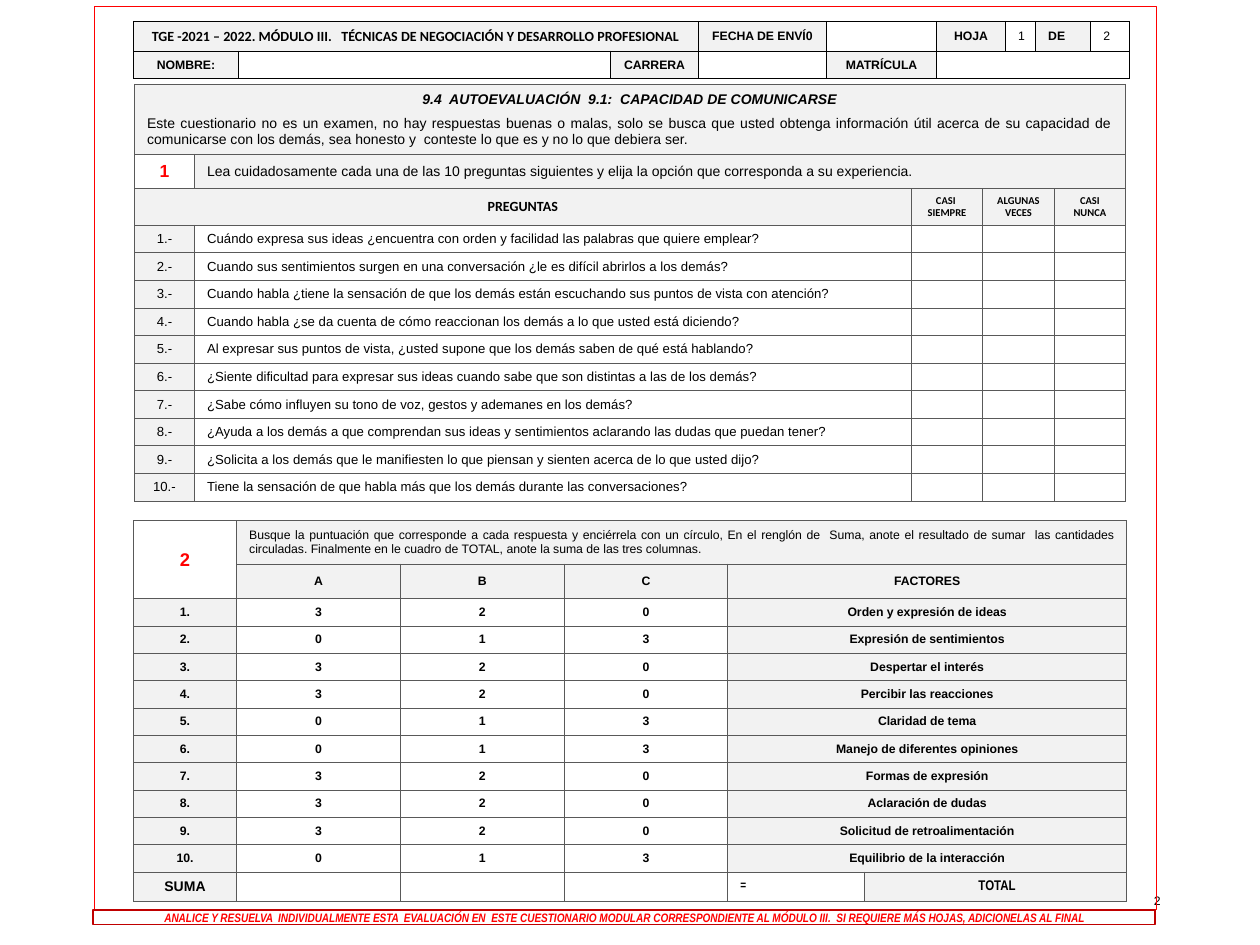
from dataclasses import dataclass
from typing import Optional

from lxml import etree
from pptx import Presentation
from pptx.dml.color import RGBColor
from pptx.enum.shapes import MSO_SHAPE
from pptx.enum.text import MSO_ANCHOR, PP_ALIGN
from pptx.oxml.ns import qn
from pptx.util import Cm, Pt

LEFT, CENTER, RIGHT, JUSTIFY = PP_ALIGN.LEFT, PP_ALIGN.CENTER, PP_ALIGN.RIGHT, PP_ALIGN.JUSTIFY
MIDDLE = MSO_ANCHOR.MIDDLE
RECT = MSO_SHAPE.RECTANGLE
COLORS = {"text": "000000", "grid": "595959", "shade": "F2F2F2", "white": "FFFFFF",
          "red": "FF0000", "dark_red": "C00000"}


@dataclass
class Para:
    text: str
    size: float = 7
    bold: bool = True
    italic: bool = False
    align: PP_ALIGN = CENTER
    font: str = "Arial"
    color: str = "text"
    spacing: Optional[float] = None
    before: float = 0
    after: float = 0


@dataclass
class Cell:
    paras: tuple[Para, ...] = ()
    fill: Optional[str] = "white"
    cols: int = 1
    rows: int = 1


@dataclass
class Grid:
    """Table layout in centimetres; None in cells marks a place covered by a span."""
    left: float
    top: float
    cols: list[float]
    rows: list[float]
    cells: list[list[Optional[Cell]]]
    border: str = "grid"


def rgb(name: str) -> RGBColor:
    return RGBColor.from_string(COLORS[name])


def write(tf, paras: tuple[Para, ...]) -> None:
    for i, para in enumerate(paras):
        p = tf.paragraphs[0] if i == 0 else tf.add_paragraph()
        r = p.add_run()
        r.text = para.text
        p.alignment = para.align
        p.space_before, p.space_after = Pt(para.before), Pt(para.after)
        if para.spacing:
            p.line_spacing = para.spacing
        for font in (p.font, r.font):
            font.name, font.size = para.font, Pt(para.size)
            font.bold, font.italic = para.bold, para.italic
            font.color.rgb = rgb(para.color)


def add_borders(cell, color: str) -> None:
    tc_pr = cell._tc.get_or_add_tcPr()
    for side in ("lnL", "lnR", "lnT", "lnB"):
        ln = etree.SubElement(tc_pr, qn(f"a:{side}"), w=str(Pt(0.5)))
        fill = etree.SubElement(ln, qn("a:solidFill"))
        etree.SubElement(fill, qn("a:srgbClr"), val=COLORS[color])


def add_grid(s, grid: Grid) -> None:
    table = s.shapes.add_table(len(grid.rows), len(grid.cols), Cm(grid.left), Cm(grid.top),
                               Cm(sum(grid.cols)), Cm(sum(grid.rows))).table
    table.first_row = table.horz_banding = False
    for col, width in zip(table.columns, grid.cols):
        col.width = Cm(width)
    for row, height in zip(table.rows, grid.rows):
        row.height = Cm(height)
    for i, line in enumerate(grid.cells):
        for j, item in enumerate(line):
            cell = table.cell(i, j)
            add_borders(cell, grid.border)
            if item and item.fill:
                cell.fill.solid()
                cell.fill.fore_color.rgb = rgb(item.fill)
            else:
                cell.fill.background()
            if item and item.paras:
                cell.vertical_anchor = MIDDLE
                write(cell.text_frame, item.paras)
            else:  # keeps the empty line from stretching its row
                end = cell.text_frame.paragraphs[0]._p.get_or_add_endParaRPr()
                end.set("sz", "700")
            if item and (item.cols > 1 or item.rows > 1):
                cell.merge(table.cell(i + item.rows - 1, j + item.cols - 1))


def add_box(s, left: float, top: float, width: float, height: float,
            line: str, weight: float, fill: Optional[str] = None):
    box = s.shapes.add_shape(RECT, Cm(left), Cm(top), Cm(width), Cm(height))
    box.shadow.inherit = False
    box.line.color.rgb, box.line.width = rgb(line), Pt(weight)
    if fill:
        box.fill.solid()
        box.fill.fore_color.rgb = rgb(fill)
    else:
        box.fill.background()
    return box


def label(text: str, cols: int = 1, **style) -> Cell:
    return Cell((Para(text, **style),), "shade", cols)


def value(text: str, fill: Optional[str] = "white", **style) -> Cell:
    return Cell((Para(text, **style),), fill)


def option(*lines: str) -> Cell:
    return Cell(tuple(Para(t, 6, font="Calibri", spacing=0.9, before=0.6) for t in lines), "shade")


QUESTIONS = [
    "Cuándo expresa sus ideas ¿encuentra con orden y facilidad las palabras que quiere emplear?",
    "Cuando sus sentimientos surgen en una conversación ¿le es difícil abrirlos a los demás?",
    "Cuando habla ¿tiene la sensación de que los demás están escuchando sus puntos de vista con atención?",
    "Cuando habla ¿se da cuenta de cómo reaccionan los demás a lo que usted está diciendo?",
    "Al expresar sus puntos de vista, ¿usted supone que los demás saben de qué está hablando?",
    "¿Siente dificultad para expresar sus ideas cuando sabe que son distintas a las de los demás?",
    "¿Sabe cómo influyen su tono de voz, gestos y ademanes en los demás?",
    "¿Ayuda a los demás a que comprendan sus ideas y sentimientos aclarando las dudas que puedan tener?",
    "¿Solicita a los demás que le manifiesten lo que piensan y sienten acerca de lo que usted dijo?",
    "Tiene la sensación de que habla más que los demás durante las conversaciones?",
]
FACTORS = [
    ("320", "Orden y expresión de ideas"), ("013", "Expresión de sentimientos"),
    ("320", "Despertar el interés"), ("320", "Percibir las reacciones"),
    ("013", "Claridad de tema"), ("013", "Manejo de diferentes opiniones"),
    ("320", "Formas de expresión"), ("320", "Aclaración de dudas"),
    ("320", "Solicitud de retroalimentación"), ("013", "Equilibrio de la interacción"),
]
INTRO = ("Este cuestionario no es un examen, no hay respuestas buenas o malas, solo se busca que usted "
         "obtenga información útil acerca de su capacidad de comunicarse con los demás, sea honesto y  "
         "conteste lo que es y no lo que debiera ser.")
SCORING = ("Busque la puntuación que corresponde a cada respuesta y enciérrela con un círculo, En el renglón "
           "de  Suma, anote el resultado de sumar  las cantidades circuladas. Finalmente en le cuadro de "
           "TOTAL, anote la suma de las tres columnas.")
FOOTER = ("ANALICE Y RESUELVA  INDIVIDUALMENTE ESTA  EVALUACIÓN EN  ESTE CUESTIONARIO MODULAR "
          "CORRESPONDIENTE AL MÓDULO III.  SI REQUIERE MÁS HOJAS, ADICIONELAS AL FINAL")

questionnaire = Grid(2.71, 1.7, [1.21, 14.45] + [1.44] * 3, [1.41, 0.69, 0.73] + [0.55] * 10, [
    [Cell((Para("9.4  AUTOEVALUACIÓN  9.1:  CAPACIDAD DE COMUNICARSE", 8, italic=True, before=4, after=4),
           Para(INTRO, 8, False, align=JUSTIFY, before=0.8)), "shade", 5)] + [None] * 4,
    [value("1", size=10, color="red"),
     label("Lea cuidadosamente cada una de las 10 preguntas siguientes y elija la opción que "
           "corresponda a su experiencia.", 4, size=8, bold=False, align=LEFT)] + [None] * 3,
    [label("PREGUNTAS", 2, size=8, font="Calibri"), None,
     option("CASI ", "SIEMPRE"), option("ALGUNAS", "VECES"), option("CASI NUNCA")],
    *[[label(f"{n}.-", size=7.5, bold=False),
       value(question, size=7.5, bold=False, align=JUSTIFY), Cell(), Cell(), Cell()]
      for n, question in enumerate(QUESTIONS, 1)],
])

scoring = Grid(2.69, 10.5, [2.08] + [3.3] * 3 + [2.76, 5.28], [0.87, 0.66] + [0.55] * 10 + [0.56], [
    [Cell((Para("2", 10.5, color="red"),), rows=2),
     label(SCORING, 5, bold=False, align=JUSTIFY)] + [None] * 4,
    [None, label("A"), label("B"), label("C"), label("FACTORES", 2), None],
    *[[label(f"{n}."), *map(value, points), label(factor, 2), None]
      for n, (points, factor) in enumerate(FACTORS, 1)],
    [label("SUMA", size=8), Cell(), Cell(), Cell(),
     value("=", font="Arial Narrow", align=JUSTIFY), label(" TOTAL", size=8, font="Arial Narrow")],
])

blank = Cell(fill=None)
header = Grid(2.69, 0.43, [2.12, 7.5, 1.77, 2.58, 2.22, 1.39, 0.6, 1.11, 0.79], [0.6, 0.53], [
    [label("TGE -2021 – 2022. MÓDULO III.   TÉCNICAS DE NEGOCIACIÓN Y DESARROLLO PROFESIONAL", 3,
           size=8, font="Calibri"), None, None, label("FECHA DE ENVÍ0"), blank, label("HOJA"),
     value("1", None, bold=False, align=LEFT), label("DE", align=LEFT),
     value("2", None, bold=False, align=LEFT)],
    [label("NOMBRE:"), blank, label("CARRERA"), blank, label("MATRÍCULA"),
     Cell(fill=None, cols=4), None, None, None],
], "text")

prs = Presentation()
prs.slide_width, prs.slide_height = Cm(25.4), Cm(19.05)
s = prs.slides.add_slide(prs.slide_layouts[6])

add_grid(s, questionnaire)
page_number = s.shapes.add_textbox(Cm(17.93), Cm(17.65), Cm(5.72), Cm(1.02))
page_number.text_frame.word_wrap = True
page_number.text_frame.vertical_anchor = MIDDLE
write(page_number.text_frame, (Para("2", bold=False, align=RIGHT),))
add_grid(s, scoring)
add_box(s, 1.9, 0.13, 21.41, 18.21, "red", 0.5)
add_grid(s, header)
footer = add_box(s, 1.88, 18.34, 21.41, 0.3, "dark_red", 1, "white")
footer.text_frame.vertical_anchor = MIDDLE
write(footer.text_frame, (Para(FOOTER, italic=True, font="Arial Narrow", color="red"),))

prs.save("out.pptx")
